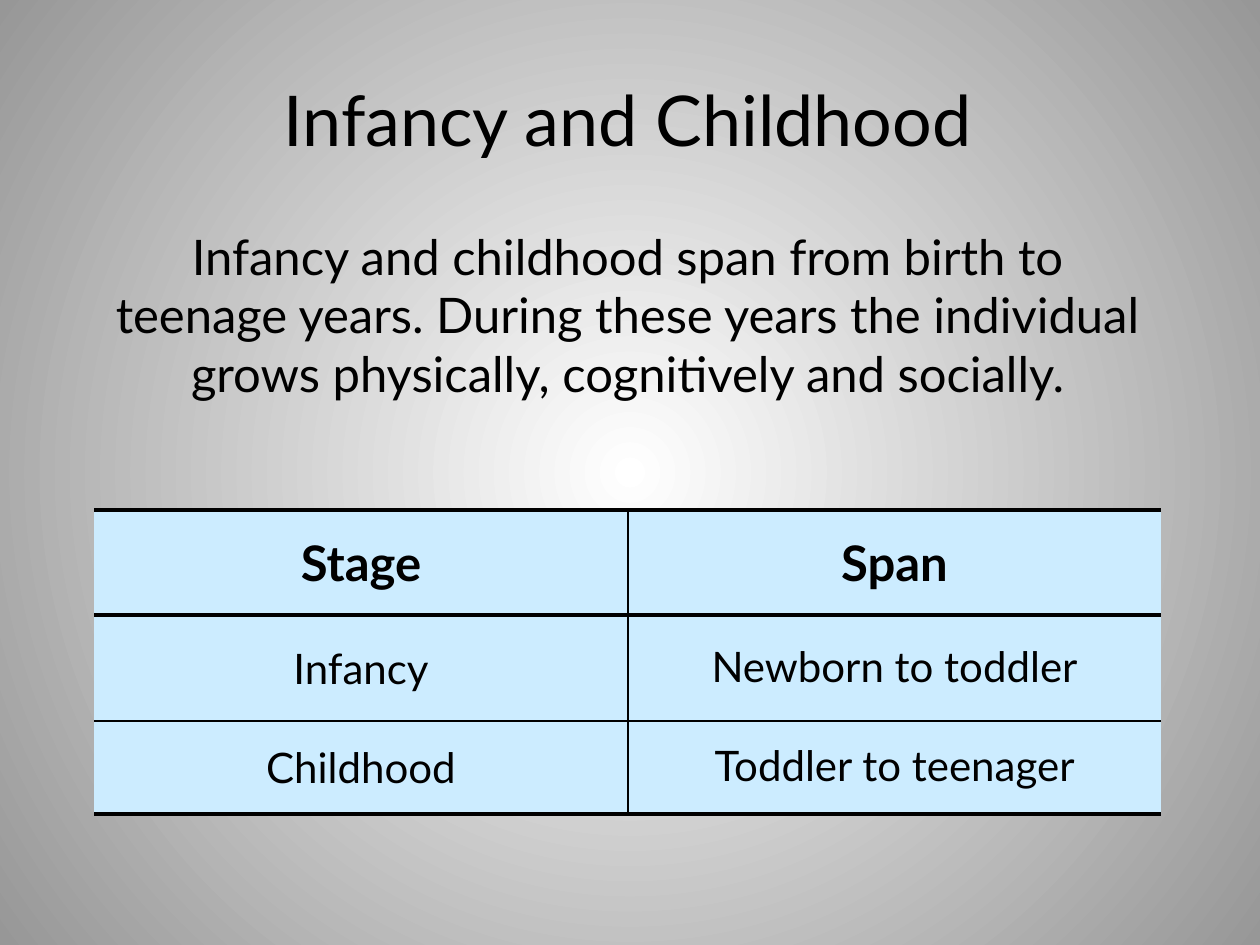
from typing import NamedTuple

from lxml.etree import SubElement
from pptx import Presentation
from pptx.dml.color import RGBColor
from pptx.enum.text import MSO_ANCHOR, PP_ALIGN
from pptx.oxml import parse_xml
from pptx.oxml.ns import nsdecls, qn
from pptx.util import Emu, Pt

FONT = "Lato"
COLORS = {"ink": "000000", "cell": "CCECFF", "glow": "FFFFFF", "edge": "979797"}
THICK, THIN = 2.25, 1


class Box(NamedTuple):
    left: int
    top: int
    width: int
    height: int


class Row(NamedTuple):
    height: int
    size: int
    bold: bool
    line: float  # line spacing in the span column
    texts: tuple[str, str]


ROWS = (
    Row(105, 28, True, 1.0, ("Stage", "Span")),
    Row(106, 24, False, 0.95, ("Infancy", "Newborn to toddler")),
    Row(93, 24, False, 0.95, ("Childhood", "Toddler to teenager")),
)
COLS = (534, 533)
TITLE = Box(92, 40, 1071, 158)
BODY = Box(92, 220, 1071, 252)
GRID = Box(94, 510, sum(COLS), sum(row.height for row in ROWS))


def px(count: int) -> Emu:
    return Emu(round(count * 914400 / 126))


def color(name: str) -> RGBColor:
    return RGBColor.from_string(COLORS[name])


def write(frame, text: str, *, size: int, bold: bool = False,
          before: float = 0, line: float = 1.0, anchor=MSO_ANCHOR.MIDDLE) -> None:
    frame.word_wrap = True
    frame.vertical_anchor = anchor
    para = frame.paragraphs[0]
    para.alignment = PP_ALIGN.CENTER
    para.space_before = Pt(before * size)
    para.line_spacing = line
    run = para.add_run()
    run.text = text
    run.font.name = FONT
    run.font.size = Pt(size)
    run.font.bold = bold
    run.font.color.rgb = color("ink")


def border(cell, widths: dict[str, float]) -> None:
    """Draw the cell's edges; a width of zero hides an edge."""
    props = cell._tc.get_or_add_tcPr()
    for spot, (side, width) in enumerate(widths.items()):
        edge = props.makeelement(qn(f"a:ln{side}"), {"w": str(Pt(width))})
        if width:
            fill = SubElement(edge, qn("a:solidFill"))
            SubElement(fill, qn("a:srgbClr"), val=COLORS["ink"])
        else:
            SubElement(edge, qn("a:noFill"))
        props.insert(spot, edge)


def paint(slide) -> None:
    """Fill the background with a round gradient."""
    fill = slide.background.fill
    fill.gradient()
    for stop, name in zip(fill.gradient_stops, ("glow", "edge")):
        stop.color.rgb = color(name)
    line = slide.element.xpath(".//p:bg//a:lin")[0]
    line.getparent().replace(line, parse_xml(
        f'<a:path {nsdecls("a")} path="circle">'
        '<a:fillToRect l="50000" t="50000" r="50000" b="50000"/></a:path>'))


def draw_table(slide, box: Box) -> None:
    table = slide.shapes.add_table(len(ROWS), len(COLS), *map(px, box)).table
    table.first_row = table.horz_banding = False
    for col, width in zip(table.columns, COLS):
        col.width = px(width)
    rules = (THICK, THICK, THIN, THICK)  # horizontal lines, top to bottom
    for i, row in enumerate(ROWS):
        table.rows[i].height = px(row.height)
        for j, text in enumerate(row.texts):
            cell = table.cell(i, j)
            cell.fill.solid()
            cell.fill.fore_color.rgb = color("cell")
            cell.vertical_anchor = MSO_ANCHOR.MIDDLE
            write(cell.text_frame, text, size=row.size, bold=row.bold,
                  before=0.2, line=row.line if j else 1.0, anchor=None)
            border(cell, {"L": THIN if j else 0, "R": 0 if j else THIN,
                          "T": rules[i], "B": rules[i + 1]})


def main() -> None:
    deck = Presentation()
    deck.slide_width, deck.slide_height = px(1260), px(945)
    slide = deck.slides.add_slide(deck.slide_layouts[5])
    paint(slide)

    # Title
    title = slide.shapes.title
    title.left, title.top, title.width, title.height = map(px, TITLE)
    write(title.text_frame, "Infancy and Childhood", size=40)

    # Stages and their spans
    draw_table(slide, GRID)

    # Introduction
    body = slide.shapes.add_textbox(*map(px, BODY))
    write(body.text_frame,
          "Infancy and childhood span from birth to teenage years. "
          "During these years the individual grows physically, "
          "cognitively and socially.",
          size=28, before=0.2, anchor=MSO_ANCHOR.TOP)

    deck.save("out.pptx")


if __name__ == "__main__":
    main()
